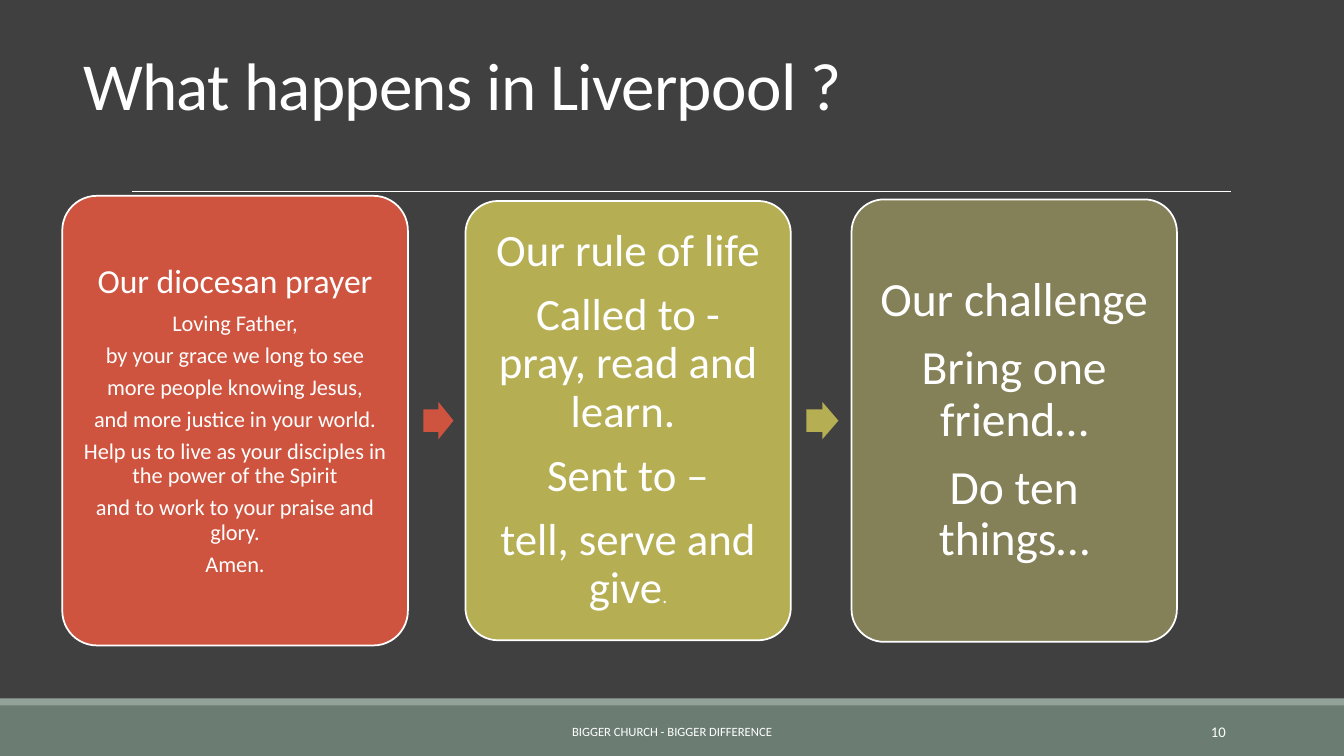
"""Build the slide on prayer, rule of life and challenge in Liverpool."""
from pptx import Presentation
from pptx.dml.color import RGBColor
from pptx.enum import shapes, text
from pptx.oxml.ns import qn
from pptx.util import Cm, Pt

SHAPE = shapes.MSO_SHAPE
ALIGN = text.PP_ALIGN
ANCHOR = text.MSO_ANCHOR
WHITE = "FFFFFF"


def paint(part, color):
    """Give a fill or a line one solid colour."""
    fill = part if hasattr(part, "solid") else part.fill
    fill.solid()
    fill.fore_color.rgb = RGBColor.from_string(color)


def write(frame, paras, align=ALIGN.CENTER, anchor=ANCHOR.MIDDLE,
          inset=(0.25, 0.13), lead=None, after=0):
    """Fill a frame with paragraphs, each a list of (text, size) runs."""
    frame.word_wrap = True
    frame.auto_size = text.MSO_AUTO_SIZE.NONE
    frame.vertical_anchor = anchor
    frame.margin_left = frame.margin_right = Cm(inset[0])
    frame.margin_top = frame.margin_bottom = Cm(inset[1])
    for i, runs in enumerate(paras):
        para = frame.add_paragraph() if i else frame.paragraphs[0]
        para.alignment = align
        para.line_spacing = lead
        para.space_after = Pt(round(after * runs[0][1], 1))
        for words, size in runs:
            run = para.add_run()
            run.text = words
            run.font.name = "Calibri"
            run.font.size = Pt(size)
            paint(run.font, WHITE)


deck = Presentation()
deck.slide_width, deck.slide_height = Cm(33.87), Cm(19.05)
slide = deck.slides.add_slide(deck.slide_layouts[5])
paint(slide.background.fill, "404040")
tree = slide.shapes

for top, high, color in [(17.78, 1.27, "6B7D72"), (17.6, 0.18, "93A299")]:
    band = tree.add_shape(SHAPE.RECTANGLE, 0, Cm(top), deck.slide_width, Cm(high))
    band.shadow.inherit = False
    paint(band.fill, color)
    band.line.fill.background()

rule = tree.add_connector(shapes.MSO_CONNECTOR.STRAIGHT,
                          Cm(3.33), Cm(4.83), Cm(31.01), Cm(4.83))
paint(rule.line, WHITE)
rule.line.width = Pt(0.5)
props = rule._element.spPr
props.append(props.makeelement(qn("a:effectLst"), {}))

title = tree.title
title.left, title.top, title.width, title.height = Cm(1.85), Cm(0.15), Cm(23.7), Cm(3.12)
write(title.text_frame, [[("What happens in Liverpool ?", 48)]],
      align=ALIGN.LEFT, anchor=ANCHOR.BOTTOM, lead=0.85)
title.text_frame.paragraphs[0].runs[0].font._element.set("spc", "-50")

for left, wide, words, size, align in [
        (10.24, 13.39, "BIGGER CHURCH - BIGGER DIFFERENCE", 9, ALIGN.CENTER),
        (27.51, 3.63, "10", 10.5, ALIGN.RIGHT)]:
    foot = tree.add_textbox(Cm(left), Cm(17.93), Cm(wide), Cm(1.02))
    write(foot.text_frame, [[(words, size)]], align=align)

prayer = ["Loving Father,", "by your grace we long to see",
          "more people knowing Jesus,", "and more justice in your world.",
          "Help us to live as your disciples in the power of the Spirit",
          "and to work to your praise and glory.", "Amen."]
life = ["Our rule of life", "Called to - pray, read and learn. ", "Sent to –"]
dare = ["Our challenge ", "Bring one friend…", "Do ten things…"]

cards = [
    (1.57, 8.71, 11.33, "CF543F", 0.25, 0.76,
     [[("Our diocesan prayer", 24)]] + [[(line, 16)] for line in prayer]),
    (11.73, 8.2, 11.07, "B5AE53", 0.33, 0.81,
     [[(line, 32)] for line in life] + [[("tell, serve and give", 32), (".", 14)]]),
    (21.46, 8.2, 11.15, "848058", 0.36, 0,
     [[(line, 34)] for line in dare]),
]
middle, gap, tall = 10.6, 0.39, 0.94
for left, wide, high, color, inset, reach, paras in cards:
    card = tree.add_shape(SHAPE.ROUNDED_RECTANGLE, Cm(left), Cm(middle - high / 2),
                          Cm(wide), Cm(high))
    card.adjustments[0] = 0.1
    card.shadow.inherit = False
    paint(card.fill, color)
    paint(card.line, WHITE)
    card.line.width = Pt(1.25)
    write(card.text_frame, paras, inset=(inset, inset), lead=0.9, after=0.35)
    if reach:
        arrow = tree.add_shape(SHAPE.RIGHT_ARROW, Cm(left + wide + gap),
                               Cm(middle - tall / 2), Cm(reach), Cm(tall))
        arrow.adjustments[0] = 0.6
        arrow.shadow.inherit = False
        paint(arrow.fill, color)
        arrow.line.fill.background()

deck.save("out.pptx")
